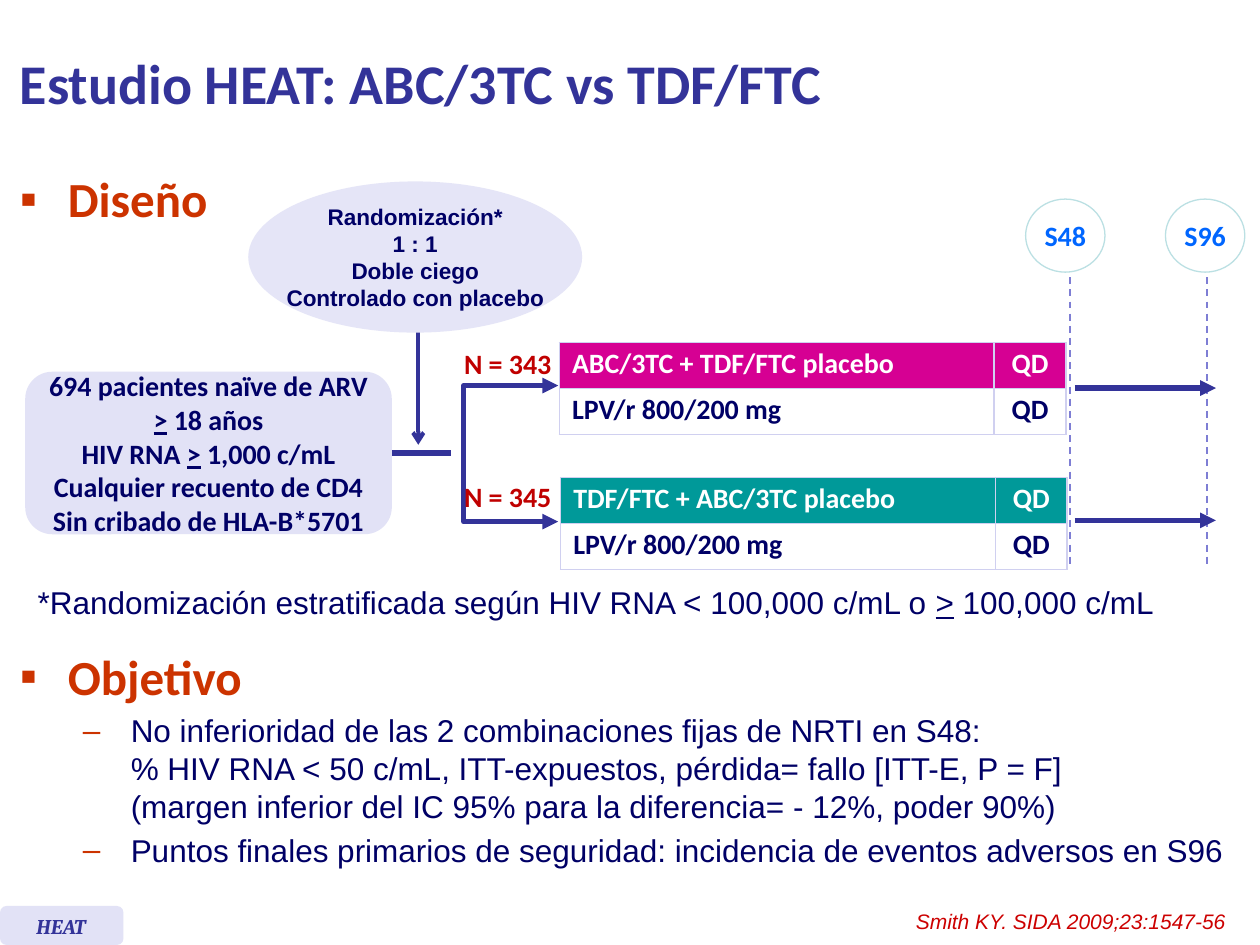
from dataclasses import dataclass
from typing import Optional

import lxml.etree
import pptx
import pptx.dml.color
import pptx.enum.dml
import pptx.enum.shapes
import pptx.enum.text
import pptx.oxml.ns
import pptx.util

# Grid: 100 columns by 75 rows of square cells
CELL = 0.1
COLUMNS, ROWS = 100, 75

INDIGO, NAVY, RUST, RED = "333399", "000066", "CC3300", "C00000"
LAVENDER, WHITE, PALE_BORDER = "E2E2F6", "FFFFFF", "D0D0F0"

SHAPE = pptx.enum.shapes.MSO_SHAPE
CENTER = pptx.enum.text.PP_ALIGN.CENTER
LEFT = pptx.enum.text.PP_ALIGN.LEFT
MIDDLE = pptx.enum.text.MSO_ANCHOR.MIDDLE
TOP = pptx.enum.text.MSO_ANCHOR.TOP


@dataclass
class Style:
    size: float
    color: str = NAVY
    name: str = "Calibri"
    bold: bool = True
    italic: bool = False


@dataclass
class Bullet:
    mark: str
    indent: float
    space: float


@dataclass
class Arm:
    count: str
    count_row: float
    column: float
    row: float
    drugs: str
    fill: str
    arrow_row: float


@dataclass
class Visit:
    label: str
    column: float
    line_column: float


HEADING = Style(28, RUST)
BODY = Style(18, name="Arial", bold=False)
LABEL = Style(16)
SQUARE = Bullet("▪", 3.8, 0)
DASH = Bullet("–", 8.8, 3.6)

ARMS = [
    Arm("N = 343", 27, 44.4, 27.2, "ABC/3TC + TDF/FTC placebo", "D60093", 30.8),
    Arm("N = 345", 37.6, 44.5, 37.9, "TDF/FTC + ABC/3TC placebo", "009999", 41.3),
]
VISITS = [Visit("S48", 81.4, 84.9), Visit("S96", 92.5, 95.8)]


def grid(cells: float) -> int:
    return pptx.util.Inches(cells * CELL)


def rgb(value: str) -> pptx.dml.color.RGBColor:
    return pptx.dml.color.RGBColor.from_string(value)


def add_xml(parent, tag: str, **attributes: str):
    return lxml.etree.SubElement(parent, pptx.oxml.ns.qn(tag), **attributes)


def write(para, text: str, style: Style, align=LEFT, bullet: Optional[Bullet] = None) -> None:
    """Fill a paragraph; parts between underscores are underlined, \\n breaks the line."""
    para.alignment = align
    if bullet:
        props = para._p.get_or_add_pPr()
        props.set("marL", str(grid(bullet.indent)))
        props.set("indent", str(-grid(SQUARE.indent)))
        if bullet.space:
            para.space_before = pptx.util.Pt(bullet.space)
        add_xml(add_xml(props, "a:buClr"), "a:srgbClr", val=RUST)
        add_xml(props, "a:buFont", typeface="Arial")
        add_xml(props, "a:buChar", char=bullet.mark)
    font = para.font
    font.size, font.name = pptx.util.Pt(style.size), style.name
    font.bold, font.italic = style.bold, style.italic
    font.color.rgb = rgb(style.color)
    for line_index, line in enumerate(text.split("\n")):
        if line_index:
            para.add_line_break()
        for index, part in enumerate(line.split("_")):
            if part:
                span = para.add_run()
                span.text = part
                if index % 2:
                    span.font.underline = True


def fill_frame(frame, lines: list[str], style: Style, align=LEFT, anchor=TOP, wrap=False) -> None:
    frame.word_wrap, frame.vertical_anchor = wrap, anchor
    for index, line in enumerate(lines):
        para = frame.add_paragraph() if index else frame.paragraphs[0]
        write(para, line, style, align)


def add_text(page, column, row, width, height):
    return page.shapes.add_textbox(grid(column), grid(row), grid(width), grid(height)).text_frame


def add_block(page, kind, column, row, width, height, fill: str, outline: Optional[str] = None):
    block = page.shapes.add_shape(kind, grid(column), grid(row), grid(width), grid(height))
    block.shadow.inherit = False
    block.fill.solid()
    block.fill.fore_color.rgb = rgb(fill)
    if outline:
        block.line.color.rgb = rgb(outline)
        block.line.width = pptx.util.Pt(0.75)
    else:
        block.line.fill.background()
    return block


def style_line(shape, color: str, width: float, head: str = "", tail: str = "") -> None:
    shape.line.color.rgb = rgb(color)
    shape.line.width = pptx.util.Pt(width)
    outline = shape.line._get_or_add_ln()
    for tag, kind in (("a:headEnd", head), ("a:tailEnd", tail)):
        if kind:
            add_xml(outline, tag, type=kind)


def add_line(page, x1, y1, x2, y2, color=INDIGO, width=3.0, tail=""):
    line = page.shapes.add_connector(
        pptx.enum.shapes.MSO_CONNECTOR.STRAIGHT, grid(x1), grid(y1), grid(x2), grid(y2))
    style_line(line, color, width, tail=tail)
    add_xml(line._element.spPr, "a:effectLst")
    return line


def add_arm_table(page, arm: Arm) -> None:
    widths, height = (34.5, 5.7), 3.65
    table = page.shapes.add_table(
        2, 2, grid(arm.column), grid(arm.row), grid(sum(widths)), grid(2 * height)).table
    for column, width in zip(table.columns, widths):
        column.width = grid(width)
    for r, drugs in enumerate((arm.drugs, "LPV/r 800/200 mg")):
        table.rows[r].height = grid(height)
        for c, text in enumerate((drugs, "QD")):
            cell = table.cell(r, c)
            cell.vertical_anchor = MIDDLE
            para = cell.text_frame.paragraphs[0]
            para.line_spacing = 0.8
            write(para, text, Style(16, NAVY if r else WHITE), CENTER if c else LEFT)
            for side in ("a:lnL", "a:lnR", "a:lnT", "a:lnB"):
                border = add_xml(cell._tc.get_or_add_tcPr(), side, w=str(pptx.util.Pt(1)))
                add_xml(add_xml(border, "a:solidFill"), "a:srgbClr", val=PALE_BORDER)
            if r:
                cell.fill.background()
            else:
                cell.fill.solid()
                cell.fill.fore_color.rgb = rgb(arm.fill)


def main() -> None:
    deck = pptx.Presentation()
    deck.slide_width, deck.slide_height = grid(COLUMNS), grid(ROWS)
    page = deck.slides.add_slide(deck.slide_layouts[6])

    # Title and design heading
    fill_frame(add_text(page, 0.6, 0.5, 89.6, 12.1), ["Estudio HEAT: ABC/3TC vs TDF/FTC"],
               Style(32, INDIGO), anchor=MIDDLE, wrap=True)
    design = add_text(page, 0.6, 12.9, 20.3, 5.7)
    design.word_wrap = True
    write(design.paragraphs[0], "Diseño", HEADING, bullet=SQUARE)

    # Randomisation and enrolment
    add_line(page, 33.2, 26, 33.2, 35.3, width=2.25, tail="arrow")
    randomization = add_block(page, SHAPE.OVAL, 19.7, 14.4, 26.5, 12, "E5E5F7")
    fill_frame(randomization.text_frame,
               ["Randomización*", "1 : 1", "Doble ciego", "Controlado con placebo"],
               Style(12.9, name="Arial"), CENTER, MIDDLE)
    patients = add_block(page, SHAPE.ROUNDED_RECTANGLE, 2, 29.5, 29.1, 12.9, LAVENDER)
    fill_frame(patients.text_frame,
               ["694 pacientes naïve de ARV", "_>_ 18 años", "HIV RNA _>_ 1,000 c/mL",
                "Cualquier recuento de CD4", "Sin cribado de HLA-B*5701"],
               LABEL, CENTER, MIDDLE)
    add_line(page, 31.1, 35.95, 35.8, 35.95).begin_connect(patients, 3)

    # Bracket that splits the patients into two arms
    builder = page.shapes.build_freeform(grid(44.3), grid(30.6))
    builder.add_line_segments(
        [(grid(x), grid(y)) for x, y in ((36.8, 30.6), (36.8, 41.4), (44.3, 41.4))], close=False)
    bracket = builder.convert_to_shape()
    bracket.shadow.inherit = False
    bracket.fill.background()
    style_line(bracket, INDIGO, 3, head="triangle", tail="triangle")

    # Treatment arms
    for arm in ARMS:
        add_arm_table(page, arm)
        fill_frame(add_text(page, 35.8, arm.count_row, 9, 3.7), [arm.count],
                   Style(16, RED), CENTER)

    # Visits and follow-up
    for visit in VISITS:
        circle = add_block(page, SHAPE.OVAL, visit.column, 15.8, 6.3, 5.8, WHITE, "BBE0E3")
        fill_frame(circle.text_frame, [visit.label], Style(16, "0066FF"), CENTER, MIDDLE)
        marker = add_line(page, visit.line_column, 22, visit.line_column, 45.1, "7E7ED4", 1)
        marker.line.dash_style = pptx.enum.dml.MSO_LINE.DASH
    for arm in ARMS:
        add_line(page, 85.3, arm.arrow_row, 96.5, arm.arrow_row, tail="triangle")

    # Stratification note
    fill_frame(add_text(page, 2, 45.8, 90.8, 4),
               ["*Randomización estratificada según HIV RNA < 100,000 c/mL o _>_ 100,000 c/mL"], BODY)

    # Objective
    objective = add_text(page, 0.6, 50.8, 98.7, 19.7)
    objective.word_wrap = True
    write(objective.paragraphs[0], "Objetivo", HEADING, bullet=SQUARE)
    for text in (
        "No inferioridad de las 2 combinaciones fijas de NRTI en S48:\n"
        "% HIV RNA < 50 c/mL, ITT-expuestos, pérdida= fallo [ITT-E, P = F]\n"
        "(margen inferior del IC 95% para la diferencia= - 12%, poder 90%)",
        "Puntos finales primarios de seguridad: incidencia de eventos adversos en S96",
    ):
        write(objective.add_paragraph(), text, BODY, bullet=DASH)

    # Footer: study tag and reference
    add_block(page, SHAPE.ROUNDED_RECTANGLE, 0, 71.9, 9.8, 3.1, LAVENDER)
    fill_frame(add_text(page, 1.9, 72, 6.1, 3), ["HEAT"],
               Style(12, INDIGO, "Cambria", italic=True))
    fill_frame(add_text(page, 71.7, 71.6, 26.8, 3), ["Smith KY. SIDA 2009;23:1547-56"],
               Style(12, "CC0000", "Arial", bold=False, italic=True))

    deck.save("out.pptx")


if __name__ == "__main__":
    main()
